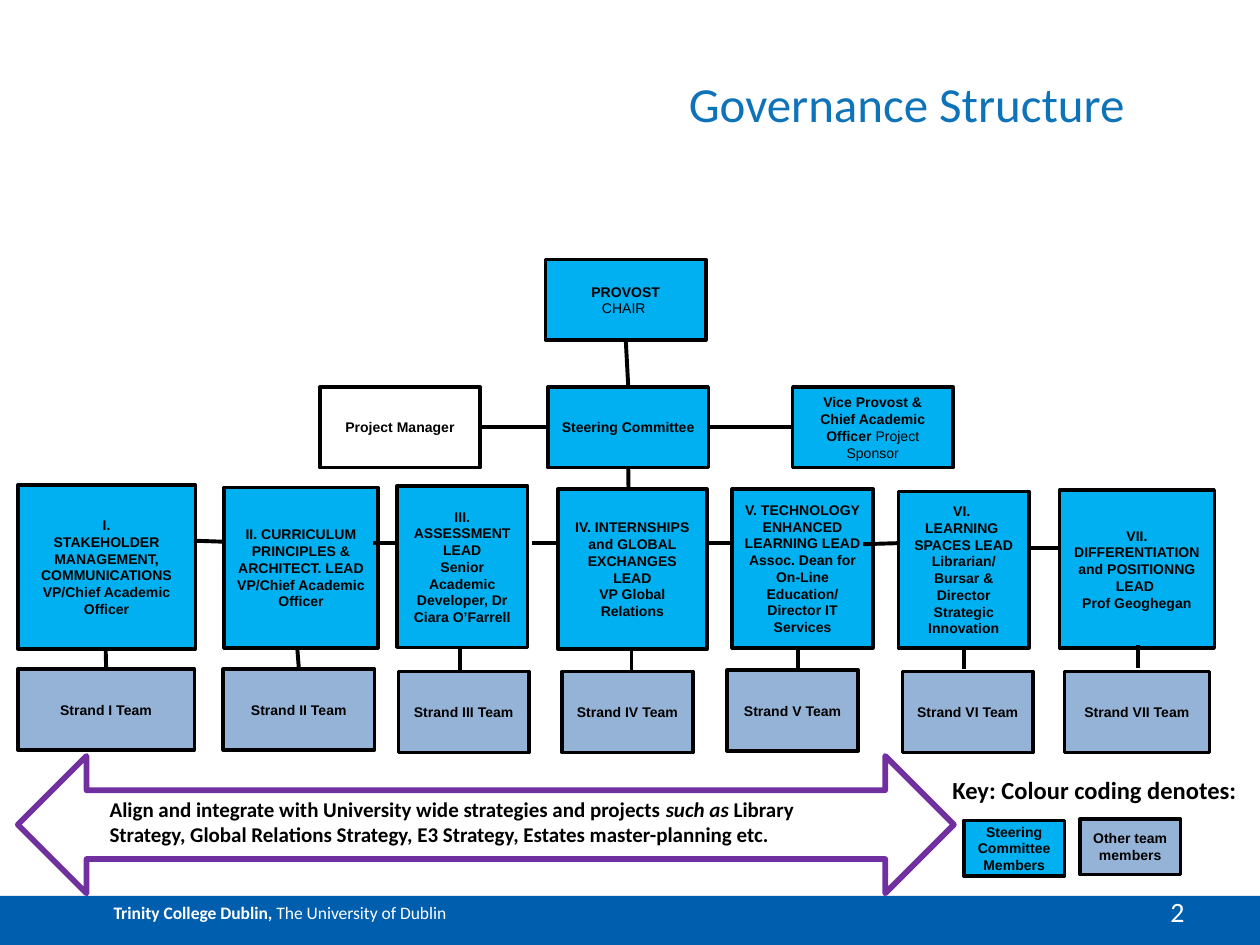
"""Build the governance structure slide."""
from dataclasses import dataclass
from typing import NamedTuple

from lxml.etree import SubElement
from pptx import Presentation
from pptx.dml.color import RGBColor
from pptx.enum.shapes import MSO_CONNECTOR, MSO_SHAPE
from pptx.enum.text import MSO_ANCHOR, PP_ALIGN
from pptx.oxml.ns import qn
from pptx.util import Cm, Pt

BLUE, GREY, WHITE, BLACK = "00B0F0", "95B3D7", "FFFFFF", "000000"
TOP, LEFT, BOTTOM, RIGHT = range(4)
BOX_H = 1.63


class Run(NamedTuple):
    text: str
    bold: bool = True
    italic: bool = False


@dataclass
class Box:
    left: float
    top: float
    width: float
    height: float
    fill: str
    paragraphs: list


@dataclass
class Strand:
    numeral: str
    lead: tuple
    team: tuple
    lines: list


STRANDS = [
    Strand("I", (0.36, 9.78, 3.58, 3.3), (0.36, 13.49, 3.56),
           ["I.", "STAKEHOLDER MANAGEMENT, COMMUNICATIONS", "VP/Chief Academic Officer"]),
    Strand("II", (4.52, 9.83, 3.1, 3.23), (4.5, 13.49, 3.05),
           ["II. CURRICULUM", "PRINCIPLES &", "ARCHITECT. LEAD", "VP/Chief Academic Officer"]),
    Strand("III", (8, 9.8, 2.64, 3.25), (8.03, 13.54, 2.64),
           ["III.", "ASSESSMENT LEAD", "Senior Academic Developer, Dr Ciara O’Farrell"]),
    Strand("IV", (11.25, 9.86, 3, 3.23), (11.33, 13.54, 2.64),
           ["IV. INTERNSHIPS and GLOBAL EXCHANGES", "LEAD", "VP Global Relations"]),
    Strand("V", (14.76, 9.86, 2.84, 3.2), (14.66, 13.51, 2.64),
           ["V. TECHNOLOGY ENHANCED LEARNING LEAD ", "Assoc. Dean for On-Line Education/",
            "Director IT Services"]),
    Strand("VI", (18.11, 9.91, 2.64, 3.15), (18.19, 13.54, 2.64),
           ["VI. ", "LEARNING ", "SPACES LEAD", "Librarian/",
            "Bursar & Director Strategic Innovation"]),
    Strand("VII", (21.36, 9.88, 3.12, 3.18), (21.46, 13.54, 2.92),
           ["VII. DIFFERENTIATION and POSITIONNG LEAD ", "Prof Geoghegan"]),
]
SIDE_LINKS = [
    (3.91, 10.9, 4.5, 10.92), (7.52, 10.95, 8.03, 10.95), (10.72, 10.95, 11.2, 10.95),
    (14.25, 10.95, 14.76, 10.95), (17.4, 10.97, 18.11, 10.95), (20.75, 11.05, 21.36, 11.05),
]
STEMS = [
    (2.13, 13.08, 13.49), (5.99, 13.03, 13.49), (9.27, 13.08, 13.54), (12.73, 13.11, 13.54),
    (16.08, 13.03, 13.51), (19.43, 13.03, 13.49), (22.94, 13, 13.46),
]


def color(value: str) -> RGBColor:
    return RGBColor.from_string(value)


def write(tf, paragraphs, size, hue=BLACK, font="Calibri", align=PP_ALIGN.LEFT) -> None:
    for i, runs in enumerate(paragraphs):
        p = tf.add_paragraph() if i else tf.paragraphs[0]
        p.alignment = align
        for run in runs:
            r = p.add_run()
            r.text = run.text
            r.font.name, r.font.size = font, Pt(size)
            r.font.bold, r.font.italic = run.bold, run.italic
            r.font.color.rgb = color(hue)


def add_outline(s, kind, place, fill=None, line=None, width=2.0):
    sp = s.shapes.add_shape(kind, *map(Cm, place))
    sp.shadow.inherit = False
    if fill:
        sp.fill.solid()
        sp.fill.fore_color.rgb = color(fill)
    else:
        sp.fill.background()
    if line:
        sp.line.color.rgb = color(line)
        sp.line.width = Pt(width)
    else:
        sp.line.fill.background()
    return sp


def add_box(s, box: Box):
    place = (box.left, box.top, box.width, box.height)
    sp = add_outline(s, MSO_SHAPE.RECTANGLE, place, box.fill, BLACK)
    sp.text_frame.word_wrap = True
    sp.text_frame.vertical_anchor = MSO_ANCHOR.MIDDLE
    write(sp.text_frame, box.paragraphs, 8, font="Arial", align=PP_ALIGN.CENTER)
    return sp


def add_label(s, place, runs, size, hue=BLACK, align=PP_ALIGN.LEFT, wrap=True):
    tf = s.shapes.add_textbox(*map(Cm, place)).text_frame
    tf.word_wrap = wrap
    write(tf, [runs], size, hue, align=align)
    return tf


def add_link(s, x1: float, y1: float, x2: float, y2: float):
    c = s.shapes.add_connector(MSO_CONNECTOR.STRAIGHT, Cm(x1), Cm(y1), Cm(x2), Cm(y2))
    c.line.color.rgb = color(BLACK)
    c.line.width = Pt(2.25)
    SubElement(c._element.spPr, qn("a:effectLst"))
    return c


def add_title_and_footer(s) -> None:
    bar = add_outline(s, MSO_SHAPE.RECTANGLE, (0, 18.06, 25.4, 0.99), "005EAE")
    tf = bar.text_frame
    tf.margin_left = Cm(2.29)
    tf.vertical_anchor = MSO_ANCHOR.TOP
    write(tf, [[Run("Trinity College Dublin, "), Run("The University of Dublin", False)]], 10, WHITE)
    title = add_label(s, (2.06, 1.04, 20.83, 1.63), [Run("Governance Structure ", False)],
                      28, "0E73B9", PP_ALIGN.RIGHT)
    title.vertical_anchor = MSO_ANCHOR.BOTTOM
    title.margin_left = title.margin_right = title.margin_top = title.margin_bottom = 0


def add_committee(s) -> None:
    def member(left, top, fill, *paragraphs):
        return add_box(s, Box(left, top, 3.23, BOX_H, fill, list(paragraphs)))

    provost = member(11, 5.23, BLUE, [Run("PROVOST")], [Run("CHAIR ", False)])
    steering = member(11.05, 7.8, BLUE, [Run("Steering Committee")])
    manager = member(6.45, 7.8, WHITE, [Run("Project Manager")])
    sponsor = member(15.98, 7.8, BLUE, [Run("Vice Provost & Chief Academic Officer "),
                                        Run("Project Sponsor", False)])
    for start, a, end, b in [(provost, BOTTOM, steering, TOP), (manager, RIGHT, steering, LEFT),
                             (steering, RIGHT, sponsor, LEFT)]:
        c = add_link(s, 0, 0, 1, 1)
        c.begin_connect(start, a)
        c.end_connect(end, b)
    add_link(s, 12.67, 9.43, 12.67, 9.88).begin_connect(steering, BOTTOM)


def add_strands(s) -> None:
    teams = []
    for strand in STRANDS:
        add_box(s, Box(*strand.lead, BLUE, [[Run(line)] for line in strand.lines]))
        teams.append(add_box(s, Box(*strand.team, BOX_H, GREY,
                                    [[Run(f"Strand {strand.numeral} Team")]])))
    for link in SIDE_LINKS:
        add_link(s, *link)
    stems = [add_link(s, x, y1, x, y2) for x, y1, y2 in STEMS]
    for stem, team in zip(stems[:2], teams):
        stem.end_connect(team, TOP)


def add_key_and_arrow(s) -> None:
    add_label(s, (18.95, 15.49, 6.27, 0.86), [Run("Key: Colour coding denotes:")], 14, wrap=False)
    add_box(s, Box(19.43, 16.54, 2.03, 1.12, BLUE, [[Run("Steering Committee Members")]]))
    add_box(s, Box(21.77, 16.51, 2.03, 1.12, GREY, [[Run("Other team members")]]))
    add_outline(s, MSO_SHAPE.LEFT_RIGHT_ARROW, (0.36, 15.24, 18.87, 2.77), line="7030A0", width=3.25)
    add_label(s, (1.96, 15.93, 15.65, 1.27), [
        Run("Align and integrate with University wide strategies and projects "),
        Run("such as ", italic=True),
        Run("Library Strategy, Global Relations Strategy, E3 Strategy, Estates master-planning etc."),
    ], 12)
    add_label(s, (21.51, 17.91, 2.62, 0.94), [Run("2", False)], 16, WHITE, PP_ALIGN.RIGHT)


def main() -> None:
    prs = Presentation()
    prs.slide_width, prs.slide_height = Cm(25.4), Cm(19.05)
    s = prs.slides.add_slide(prs.slide_layouts[6])
    add_title_and_footer(s)
    add_committee(s)
    add_strands(s)
    add_key_and_arrow(s)
    prs.save("out.pptx")


if __name__ == "__main__":
    main()
